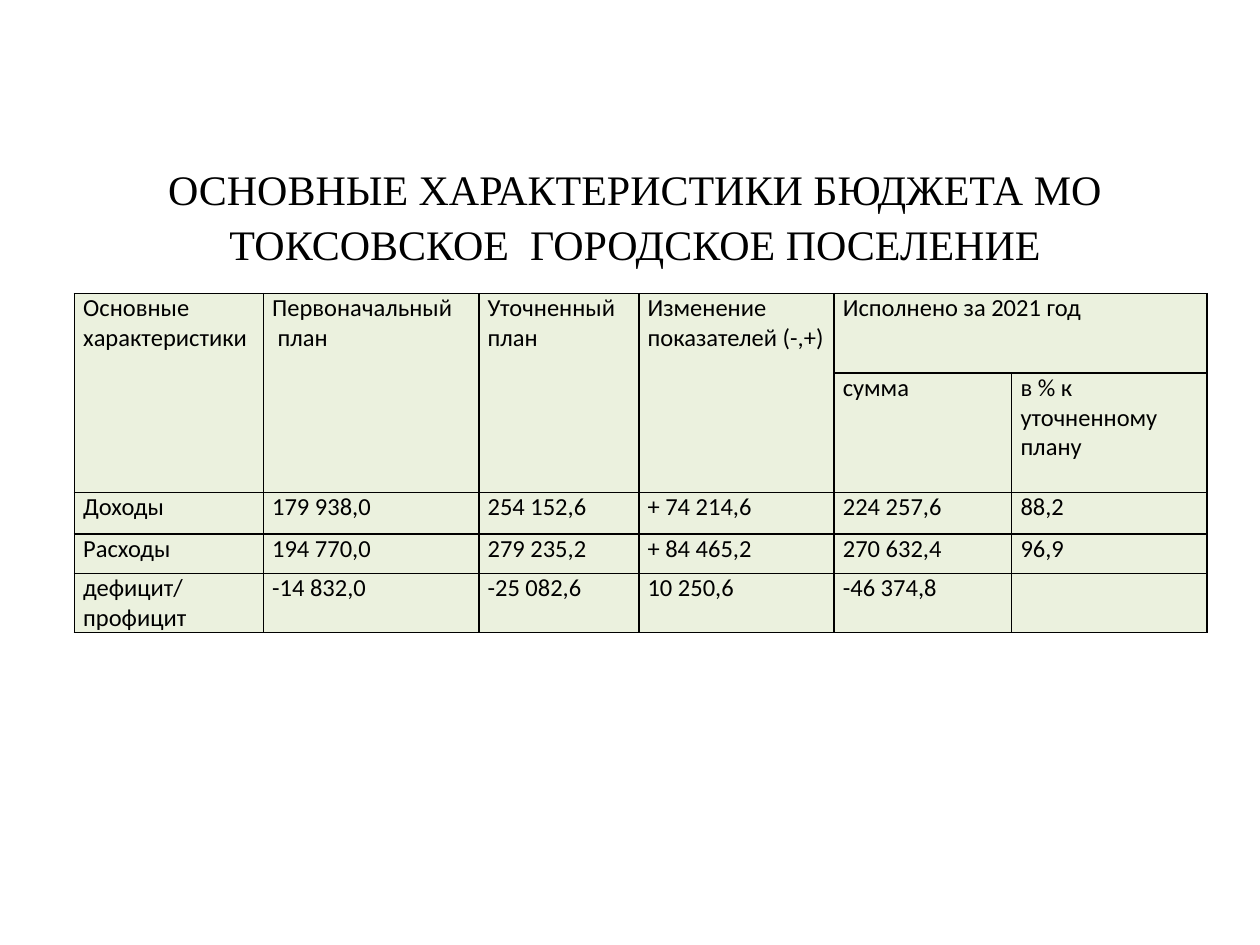
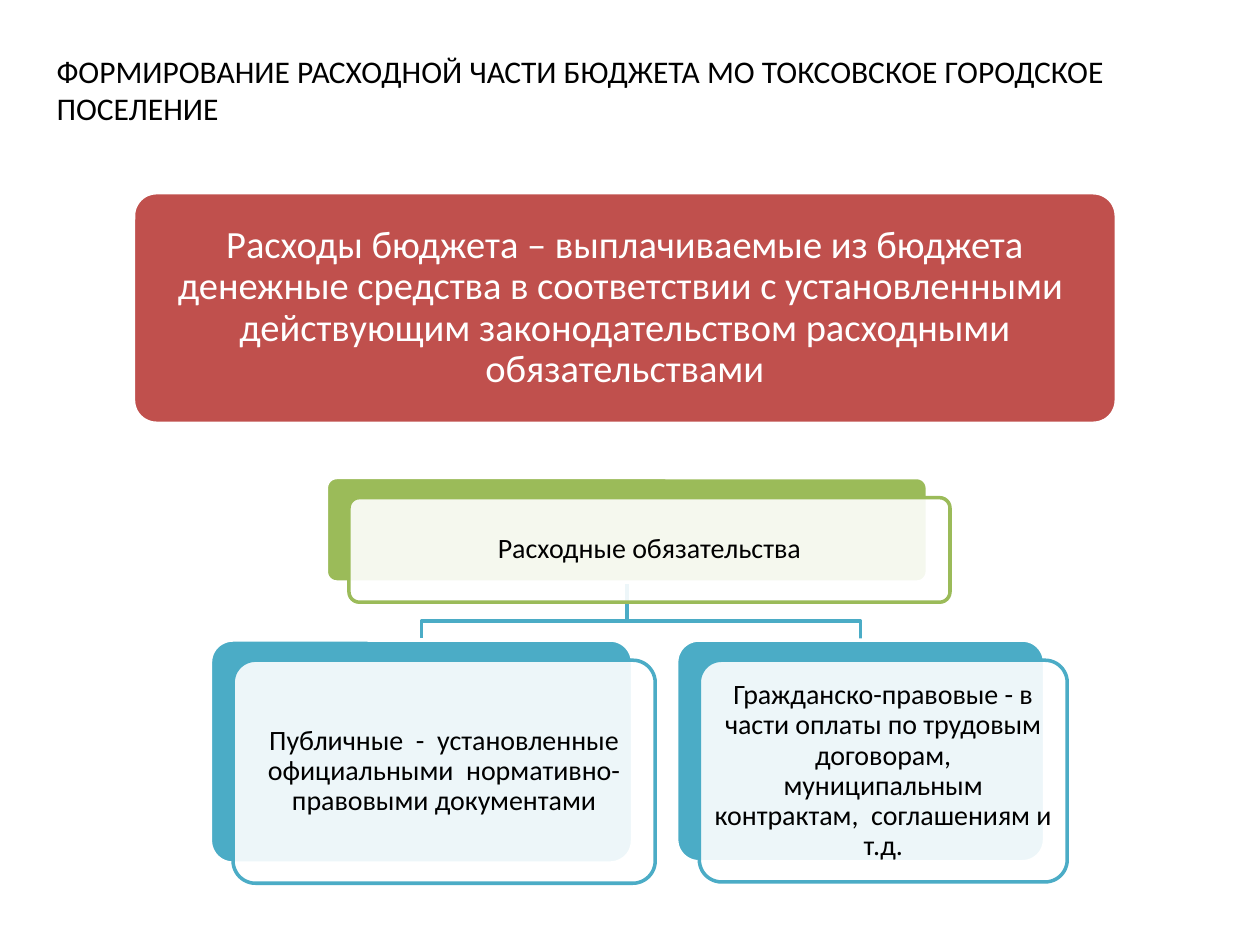
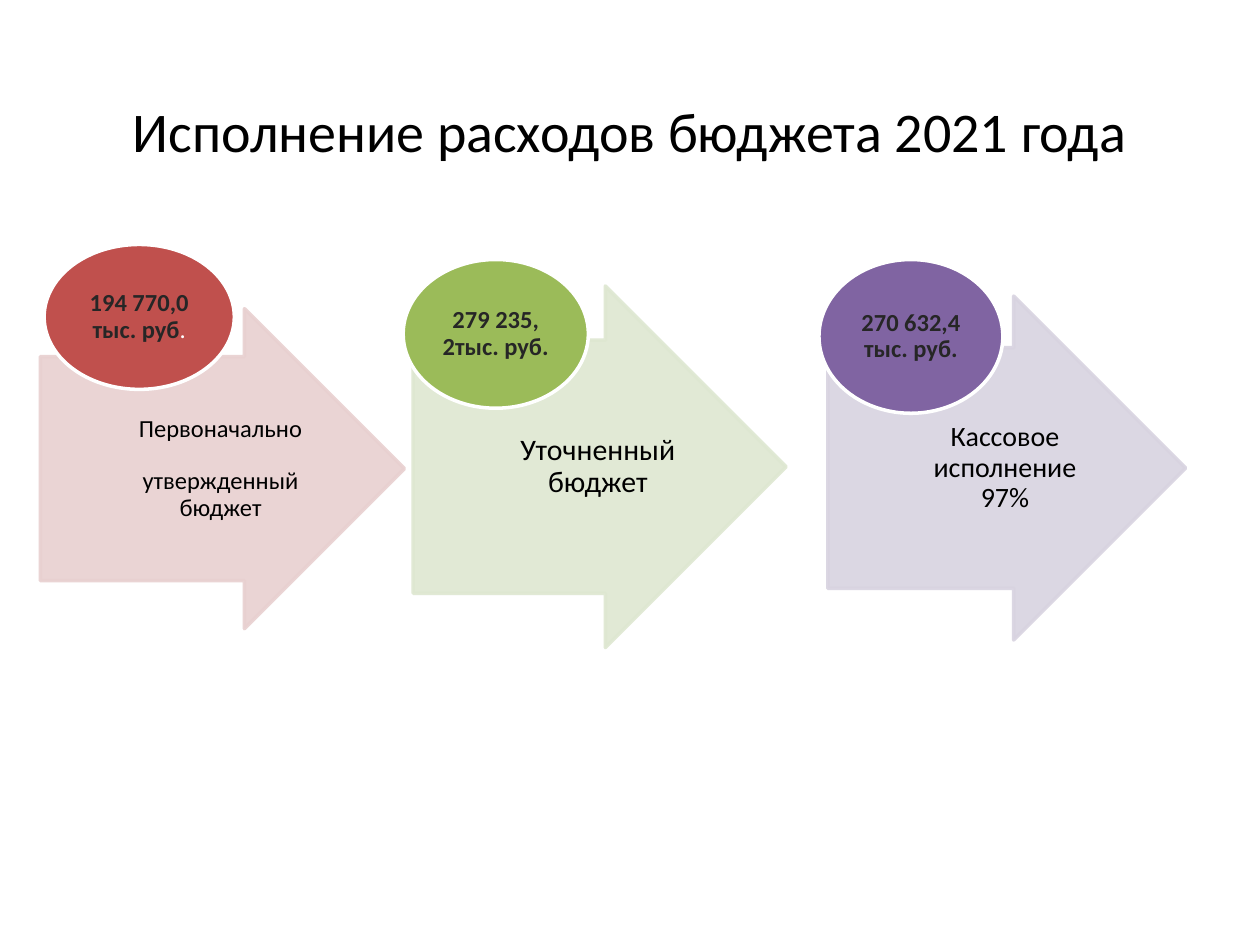
import pptx
import pptx.dml.color
import pptx.enum.shapes
import pptx.enum.text
import pptx.oxml.ns
import pptx.util
from lxml import etree

SHAPE = pptx.enum.shapes.MSO_SHAPE
ALIGN = pptx.enum.text.PP_ALIGN
ANCHOR = pptx.enum.text.MSO_ANCHOR
qn = pptx.oxml.ns.qn

THEME = {
    "font": "Calibri", "serif": "Times New Roman",
    "black": "000000", "white": "FFFFFF", "dark": "262626",
    "red": "C0504D", "green": "9BBB59", "blue": "4BACC6", "purple": "8064A2",
    "pale_red": "E8D0D0", "pale_green": "DEE7D1", "pale_purple": "D8D3E0",
    "cell": "EBF1DE",
    "title": 32, "budget_title": 24, "heading": 18, "statement": 22,
    "card": 16, "table": 14, "amount": 14,
    "outline": 2, "border": 1, "opacity": 90, "leading": 0.9,
}

# ---- Content: lengths are in grid units, ten units to the slide's width ----
BUDGET_TITLE = "ОСНОВНЫЕ ХАРАКТЕРИСТИКИ БЮДЖЕТА МО ТОКСОВСКОЕ  ГОРОДСКОЕ ПОСЕЛЕНИЕ"
BUDGET_COLUMNS = [1.5, 1.71, 1.27, 1.55, 1.41, 1.55]
BUDGET_HEIGHTS = [0.63, 0.95, 0.33, 0.31, 0.47]
BUDGET_ROWS = [
    ["Основные характеристики", "Первоначальный\n план", "Уточненный\nплан",
     "Изменение показателей (-,+)", "Исполнено за 2021 год", ""],
    ["", "", "", "", "сумма", "в % к уточненному плану"],
    ["Доходы", "179 938,0", "254 152,6", "+ 74 214,6", "224 257,6", "88,2"],
    ["Расходы", "194 770,0", "279 235,2", "+ 84 465,2", "270 632,4", "96,9"],
    ["дефицит/профицит", "-14 832,0", "-25 082,6", "10 250,6", "-46 374,8", ""],
]
BUDGET_MERGES = [((0, c), (1, c)) for c in range(4)] + [((0, 4), (0, 5))]

SPENDING_HEADING = "ФОРМИРОВАНИЕ РАСХОДНОЙ ЧАСТИ БЮДЖЕТА МО ТОКСОВСКОЕ ГОРОДСКОЕ ПОСЕЛЕНИЕ"
SPENDING_STATEMENT = ("Расходы бюджета – выплачиваемые из бюджета денежные средства "
                      "в соответствии с установленными  действующим законодательством "
                      "расходными обязательствами")
# text, colour, box; the first is the parent of the others
OBLIGATIONS = [
    ("Расходные обязательства", "green", (2.59, 3.79, 4.77, 0.83)),
    ("Публичные  -  установленные официальными  нормативно-правовыми документами",
     "blue", (1.67, 5.08, 3.35, 1.77)),
    ("Гражданско-правовые - в части оплаты по трудовым договорам, муниципальным "
     "контрактам,  соглашениям и т.д.", "blue", (5.37, 5.08, 2.92, 1.76)),
]
CARD_SHIFT = (0.18, 0.16)
BEND_ABOVE_CHILD = 0.15

EXECUTION_TITLE = "Исполнение расходов бюджета 2021 года"
STAGES = [
    {"label": "Первоначально\nутвержденный бюджет", "size": 14, "gap": 15,
     "arrow": (0.32, 2.45, 2.89, 2.54), "tint": "pale_red",
     "amount": "194 770,0 тыс. руб", "mark": ".",
     "badge": (0.35, 1.94, 1.51, 1.15), "colour": "red"},
    {"label": "Уточненный бюджет", "size": 17, "gap": 0,
     "arrow": (3.28, 2.27, 2.96, 2.87), "tint": "pale_green",
     "amount": "279 235, 2тыс. руб.", "mark": "",
     "badge": (3.2, 2.06, 1.47, 1.18), "colour": "green"},
    {"label": "Кассовое исполнение 97%", "size": 16, "gap": 0,
     "arrow": (6.57, 2.35, 2.84, 2.73), "tint": "pale_purple",
     "amount": "270 632,4 тыс. руб.", "mark": "",
     "badge": (6.5, 2.06, 1.46, 1.22), "colour": "purple"},
]
# share of an arrow's box taken by its label: left, top, width, height
LABEL_SHARE = (0.25, 0.15, 0.49, 0.7)

deck = pptx.Presentation()
deck.slide_width, deck.slide_height = pptx.util.Inches(10), pptx.util.Inches(7.5)
UNIT = deck.slide_width / 10


# ---- Helpers ----
def grid(*lengths):
    return [pptx.util.Emu(round(length * UNIT)) for length in lengths]


def rgb(name):
    return pptx.dml.color.RGBColor.from_string(THEME[name])


def style_font(font, size, colour="black", face="font", bold=False):
    for key, value in {"name": THEME[face], "size": pptx.util.Pt(size),
                       "bold": bold}.items():
        setattr(font, key, value)
    font.color.rgb = rgb(colour)


def write(frame, text, size, colour="black", face="font", bold=False,
          align=ALIGN.CENTER, anchor=ANCHOR.MIDDLE, leading=None,
          gap=0, insets=None):
    frame.word_wrap = True
    frame.vertical_anchor = anchor
    if insets is not None:
        for side in ("left", "top", "right", "bottom"):
            setattr(frame, "margin_" + side, grid(insets)[0])
    for index, line in enumerate(text.split("\n")):
        paragraph = frame.paragraphs[0] if index == 0 else frame.add_paragraph()
        paragraph.alignment = align
        if leading:
            paragraph.line_spacing = leading
        if index and gap:
            paragraph.space_before = pptx.util.Pt(gap)
        run = paragraph.add_run()
        run.text = line
        style_font(run.font, size, colour, face, bold)


def add_text(slide, box, text, size, **options):
    write(slide.shapes.add_textbox(*grid(*box)).text_frame, text, size, **options)


def add_block(slide, kind, box, fill, line, adjustments=()):
    block = slide.shapes.add_shape(kind, *grid(*box))
    block.shadow.inherit = False
    block.fill.solid()
    block.fill.fore_color.rgb = rgb(fill)
    block.line.color.rgb = rgb(line)
    block.line.width = pptx.util.Pt(THEME["outline"])
    for index, value in enumerate(adjustments):
        block.adjustments[index] = value
    return block


def fade(block, *places):
    for place in places:
        colour = block.element.spPr.find("/".join(qn(tag) for tag in place))
        etree.SubElement(colour, qn("a:alpha"), val=str(THEME["opacity"] * 1000))


def border(cell):
    properties = cell._tc.get_or_add_tcPr()
    for side in ("a:lnL", "a:lnR", "a:lnT", "a:lnB"):
        line = etree.SubElement(properties, qn(side),
                                w=str(pptx.util.Pt(THEME["border"])))
        fill = etree.SubElement(line, qn("a:solidFill"))
        etree.SubElement(fill, qn("a:srgbClr"), val=THEME["black"])


FILL = ("a:solidFill", "a:srgbClr")
LINE = ("a:ln",) + FILL


# ---- Slides ----
def budget_slide(slide):
    add_text(slide, (0.51, 0.3, 9.06, 1.88), BUDGET_TITLE, THEME["budget_title"],
             face="serif", anchor=ANCHOR.BOTTOM, leading=1.08)
    box = grid(0.59, 2.33, sum(BUDGET_COLUMNS), sum(BUDGET_HEIGHTS))
    table = slide.shapes.add_table(len(BUDGET_ROWS), len(BUDGET_COLUMNS), *box).table
    for column, width in zip(table.columns, grid(*BUDGET_COLUMNS)):
        column.width = width
    for row, height in zip(table.rows, grid(*BUDGET_HEIGHTS)):
        row.height = height
    for r, texts in enumerate(BUDGET_ROWS):
        for c, text in enumerate(texts):
            cell = table.cell(r, c)
            border(cell)
            cell.fill.solid()
            cell.fill.fore_color.rgb = rgb("cell")
            cell.margin_left = cell.margin_right = grid(0.07)[0]
            cell.margin_top = cell.margin_bottom = 0
            if text:
                write(cell.text_frame, text, THEME["table"],
                      align=ALIGN.LEFT, anchor=ANCHOR.TOP)
            else:
                style_font(cell.text_frame.paragraphs[0].font, THEME["table"])
    for first, last in BUDGET_MERGES:
        table.cell(*first).merge(table.cell(*last))


def add_branch(slide, parent, child):
    start, end = parent[0] + parent[2] / 2, child[0] + child[2] / 2
    bend = child[1] - BEND_ABOVE_CHILD
    points = [(start, parent[1] + parent[3]), (start, bend), (end, bend), (end, child[1])]
    outline = slide.shapes.build_freeform(*grid(*points[0]))
    outline.add_line_segments([grid(*point) for point in points[1:]], close=False)
    branch = outline.convert_to_shape()
    branch.shadow.inherit = False
    branch.fill.background()
    branch.line.color.rgb = rgb("blue")
    branch.line.width = pptx.util.Pt(THEME["outline"])


def spending_slide(slide):
    add_text(slide, (0.35, 0.36, 9.65, 0.71), SPENDING_HEADING, THEME["heading"],
             align=ALIGN.LEFT, anchor=ANCHOR.TOP)
    statement = add_block(slide, SHAPE.ROUNDED_RECTANGLE, (1.06, 1.53, 7.8, 1.83),
                          "red", "white", [0.1])
    write(statement.text_frame, SPENDING_STATEMENT, THEME["statement"],
          colour="white", leading=THEME["leading"], insets=0.09)
    # Branches lie behind the cards
    for _, _, child in OBLIGATIONS[1:]:
        add_branch(slide, OBLIGATIONS[0][2], child)
    for text, colour, box in OBLIGATIONS:
        left, top, width, height = box
        add_block(slide, SHAPE.ROUNDED_RECTANGLE, box, colour, "white", [0.1])
        front = (left + CARD_SHIFT[0], top + CARD_SHIFT[1], width, height)
        card = add_block(slide, SHAPE.ROUNDED_RECTANGLE, front, "white", colour, [0.1])
        fade(card, FILL)
        write(card.text_frame, text, THEME["card"], leading=THEME["leading"], insets=0.07)


def execution_slide(slide):
    add_text(slide, (0.5, 0.6, 9, 0.87), EXECUTION_TITLE, THEME["title"])
    for stage in STAGES:
        left, top, width, height = stage["arrow"]
        arrow = add_block(slide, SHAPE.RIGHT_ARROW, stage["arrow"],
                          stage["tint"], stage["tint"], [0.7, 0.5])
        fade(arrow, FILL, LINE)
        x, y, w, h = LABEL_SHARE
        add_text(slide, (left + x * width, top + y * height, w * width, h * height),
                 stage["label"], stage["size"], gap=stage["gap"],
                 leading=THEME["leading"], insets=0.02)
        badge = add_block(slide, SHAPE.OVAL, stage["badge"], stage["colour"], "white")
        write(badge.text_frame, stage["amount"], THEME["amount"], colour="dark",
              bold=True, leading=THEME["leading"], insets=0.01)
        if stage["mark"]:
            mark = badge.text_frame.paragraphs[0].add_run()
            mark.text = stage["mark"]
            style_font(mark.font, THEME["amount"], "white")


def main():
    for build in (budget_slide, spending_slide, execution_slide):
        build(deck.slides.add_slide(deck.slide_layouts[6]))
    deck.save("out.pptx")


if __name__ == "__main__":
    main()
